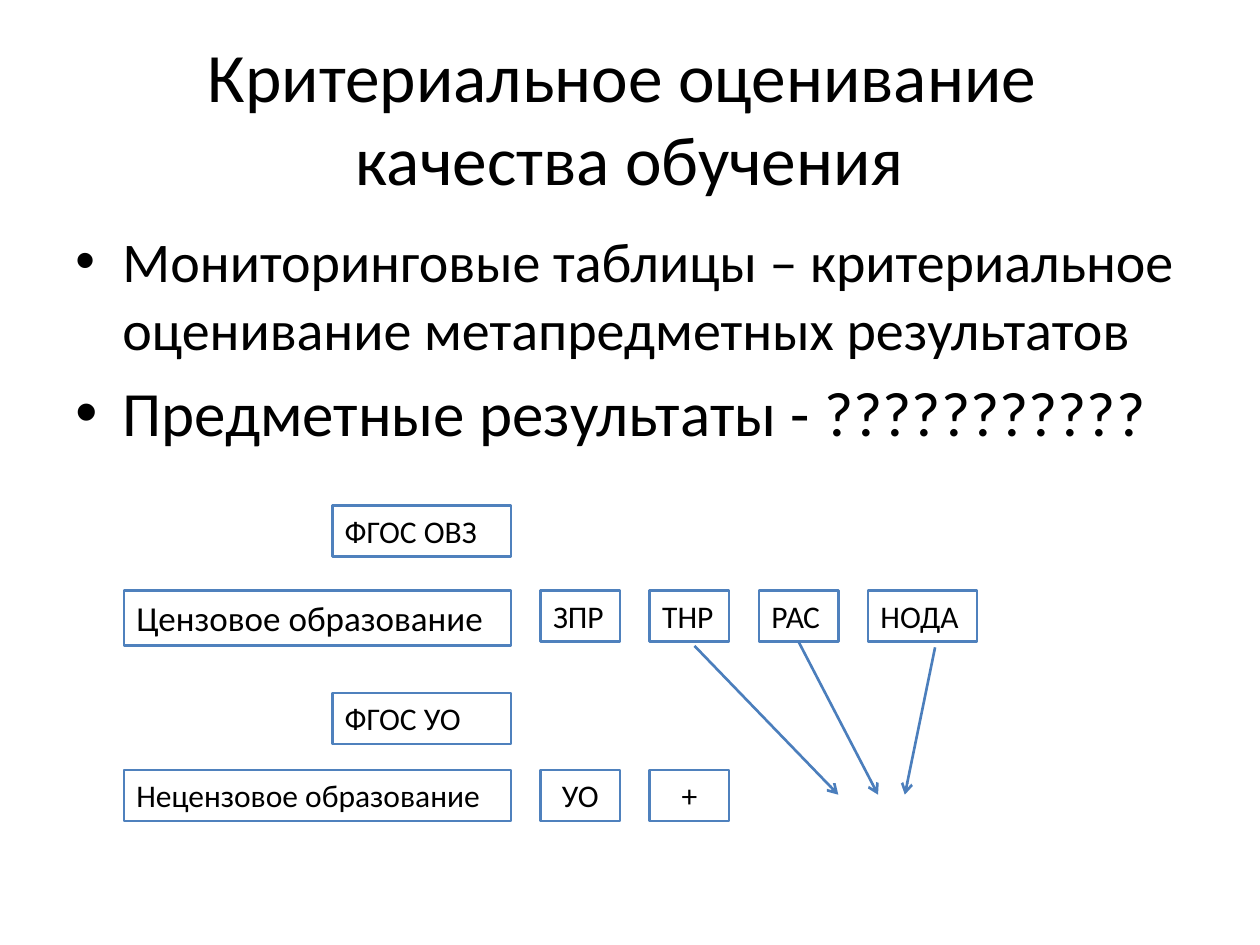
from collections import namedtuple
from dataclasses import dataclass

from lxml import etree
from pptx import Presentation
from pptx.dml.color import RGBColor
from pptx.enum.shapes import MSO_CONNECTOR, MSO_SHAPE
from pptx.enum.text import MSO_ANCHOR, MSO_AUTO_SIZE, PP_ALIGN
from pptx.oxml.ns import qn
from pptx.util import Cm, Pt

RECTANGLE = MSO_SHAPE.RECTANGLE
STRAIGHT = MSO_CONNECTOR.STRAIGHT
MIDDLE, TOP = MSO_ANCHOR.MIDDLE, MSO_ANCHOR.TOP
LEFT, CENTER = PP_ALIGN.LEFT, PP_ALIGN.CENTER
GROW = MSO_AUTO_SIZE.SHAPE_TO_FIT_TEXT
BOTTOM_SIDE = 2

Box = namedtuple("Box", "left top width height")


@dataclass(frozen=True)
class Theme:
    font: str = "Calibri"
    ink: RGBColor = RGBColor(0x00, 0x00, 0x00)
    border: RGBColor = RGBColor(0x4F, 0x81, 0xBD)
    arrow: RGBColor = RGBColor(0x4B, 0x7E, 0xBC)
    line: float = 1.5
    title: float = 39.6
    bullet: float = 32
    large_bullet: float = 36
    label: float = 18
    large_label: float = 20


THEME = Theme()


def lengths(box):
    return [Cm(value) for value in box]


def add_span(para, text, size):
    span = para.add_run()
    span.text = text
    span.font.name = THEME.font
    span.font.size = Pt(size)
    span.font.color.rgb = THEME.ink


def add_text_area(slide, box, anchor):
    frame = slide.shapes.add_textbox(*lengths(box)).text_frame
    frame.word_wrap = True
    frame.vertical_anchor = anchor
    return frame


def add_title(slide, box, lines):
    para = add_text_area(slide, box, MIDDLE).paragraphs[0]
    para.alignment = CENTER
    for index, line in enumerate(lines):
        if index:
            para.add_line_break()
        add_span(para, line, THEME.title)


def add_bullets(slide, box, items):
    frame = add_text_area(slide, box, TOP)
    indent = Cm(0.95)
    for index, (text, size) in enumerate(items):
        para = frame.add_paragraph() if index else frame.paragraphs[0]
        para.space_before = Pt(size * 0.2)
        properties = para._p.get_or_add_pPr()
        properties.set("marL", str(indent))
        properties.set("indent", str(-indent))
        etree.SubElement(properties, qn("a:buFont"), typeface="Arial")
        etree.SubElement(properties, qn("a:buChar"), char="•")
        add_span(para, text, size)


def add_label(slide, box, text, size=THEME.label, align=LEFT):
    label = slide.shapes.add_shape(RECTANGLE, *lengths(box))
    label.shadow.inherit = False
    label.fill.background()
    label.line.color.rgb = THEME.border
    label.line.width = Pt(THEME.line)
    frame = label.text_frame
    frame.word_wrap = True
    frame.auto_size = GROW
    frame.vertical_anchor = TOP
    para = frame.paragraphs[0]
    para.alignment = align
    add_span(para, text, size)
    return label


def add_arrow(slide, start, end):
    arrow = slide.shapes.add_connector(STRAIGHT, *lengths(start + end))
    arrow.line.color.rgb = THEME.arrow
    arrow.line.width = Pt(THEME.line)
    etree.SubElement(arrow.line._get_or_add_ln(), qn("a:tailEnd"), type="arrow")
    etree.SubElement(arrow._element.spPr, qn("a:effectLst"))
    return arrow


def add_diagram(slide, box):
    row_height, name_width, heading_width = 1.03, 7.8, 3.6
    cell_width, cell_pitch, cells_left = 1.6, 2.2, 8.4
    upper_row, lower_row = 1.72, 5.33

    def place(left, top, width, height=row_height):
        return Box(box.left + left, box.top + top, width, height)

    def point(left, top):
        return box.left + left, box.top + top

    for text, top in (("ФГОС ОВЗ", 0), ("ФГОС УО", 3.78)):
        add_label(slide, place(name_width - heading_width, top, heading_width), text)

    add_label(slide, place(0, upper_row, name_width, 1.11),
              "Цензовое образование", THEME.large_label)
    add_label(slide, place(0, lower_row, name_width), "Нецензовое образование")

    cells = {}
    for top, align, names in (
        (upper_row, LEFT, ("ЗПР", "ТНР", "РАС", "НОДА")),
        (lower_row, CENTER, ("УО", "+")),
    ):
        for column, name in enumerate(names):
            width = cell_pitch if name == "НОДА" else cell_width
            left = cells_left + column * cell_pitch
            cells[name] = add_label(slide, place(left, top, width), name, align=align)

    arrow_end = 5.83
    add_arrow(slide, point(11.5, 2.83), point(14.4, arrow_end))
    middle_arrow = add_arrow(slide, point(13.6, 2.75), point(15.2, arrow_end))
    middle_arrow.begin_connect(cells["РАС"], BOTTOM_SIDE)
    add_arrow(slide, point(16.35, 2.86), point(15.74, arrow_end))


def main():
    deck = Presentation()
    deck.slide_width, deck.slide_height = Cm(25.4), Cm(19.05)
    slide = deck.slides.add_slide(deck.slide_layouts[6])
    add_title(slide, Box(1.27, 0.76, 22.86, 3.18),
              ("Критериальное оценивание ", "качества обучения"))
    add_bullets(slide, Box(1.27, 4.45, 22.86, 5.08), (
        ("Мониторинговые таблицы – критериальное оценивание метапредметных результатов",
         THEME.bullet),
        ("Предметные результаты - ???????????", THEME.large_bullet),
    ))
    add_diagram(slide, Box(2.5, 10.19, 17.2, 6.36))
    deck.save("out.pptx")


if __name__ == "__main__":
    main()
